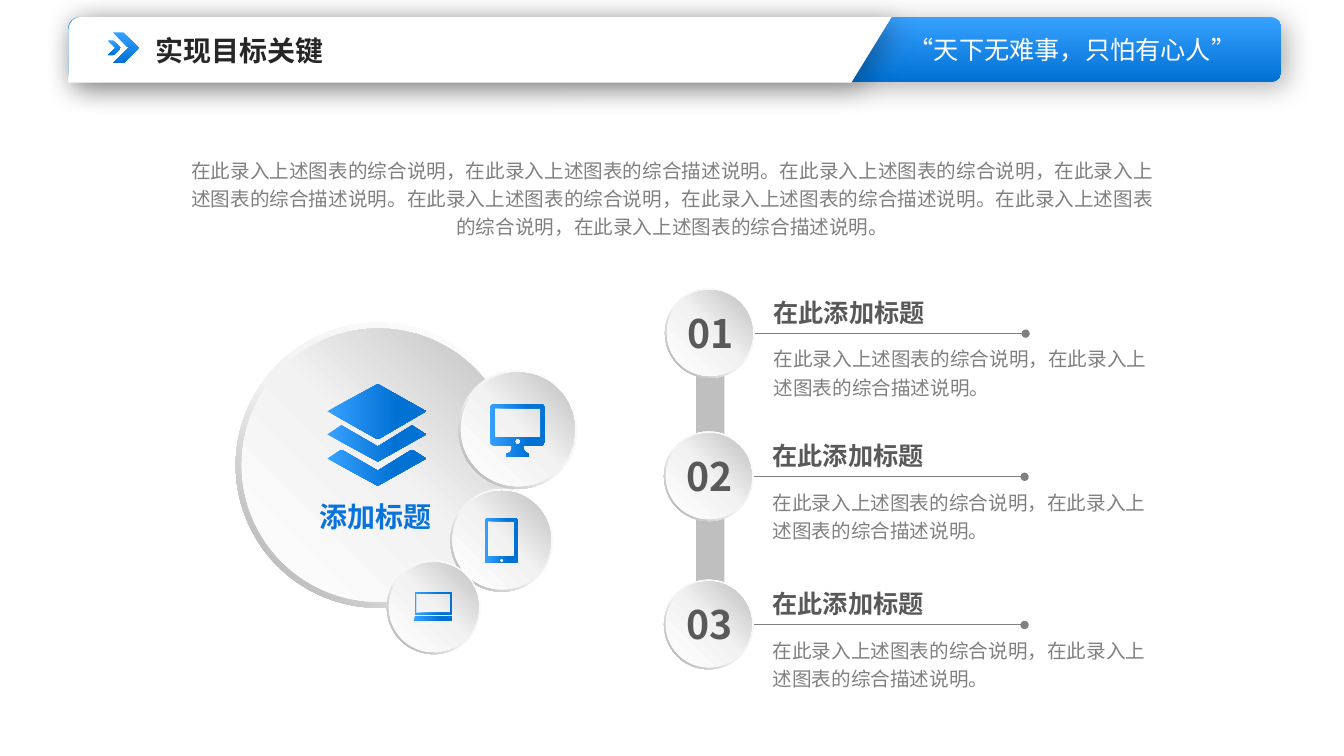
import math
from dataclasses import dataclass

import pptx
import pptx.dml.color
import pptx.enum.shapes
import pptx.enum.text
import pptx.oxml.ns
import pptx.util
from lxml import etree

Inches = pptx.util.Inches
SHAPE = pptx.enum.shapes.MSO_SHAPE
ALIGN = pptx.enum.text.PP_ALIGN
qn = pptx.oxml.ns.qn


@dataclass(frozen=True)
class Theme:
    font: str = "Noto Sans CJK SC"
    white: str = "FFFFFF"
    ink: str = "262626"
    heading: str = "595959"
    body: str = "808080"
    accent: str = "0973DD"
    rail: str = "BFBFBF"
    blue: tuple = ((0, "37A1FF"), (100, "0171D4"))
    icon: tuple = ((0, "37A1FF"), (70, "0171D4"))
    rim: tuple = ((0, "FFFFFF"), (55, "F2F2F2"), (100, "A6A6A6"))
    face: tuple = ((0, "FFFFFF"), (51, "F2F2F2"), (100, "BFBFBF"))
    number_size: int = 28
    title_size: int = 20
    heading_size: int = 18
    body_size: int = 14


THEME = Theme()
SUMMARY = "在此录入上述图表的综合说明，在此录入上述图表的综合描述说明。"


def rgb(color):
    return pptx.dml.color.RGBColor.from_string(color)


def paint(shape, fill, angle=0):
    """Fill with one colour, or with gradient stops at a clockwise angle."""
    shape.shadow.inherit = False
    shape.line.fill.background()
    if isinstance(fill, str):
        shape.fill.solid()
        shape.fill.fore_color.rgb = rgb(fill)
        return
    shape.fill.gradient()
    shape.fill.gradient_angle = (360 - angle) % 360
    stops = shape.element.spPr.find(qn("a:gradFill")).find(qn("a:gsLst"))
    for old_stop in list(stops):
        stops.remove(old_stop)
    for position, color in fill:
        stop = etree.SubElement(stops, qn("a:gs"), pos=str(position * 1000))
        etree.SubElement(stop, qn("a:srgbClr"), val=color)


def cast_shadow(shape):
    effects = shape.element.spPr.find(qn("a:effectLst"))
    shadow = etree.SubElement(
        effects, qn("a:outerShdw"), blurRad=str(pptx.util.Pt(20)),
        dist=str(pptx.util.Pt(5)), dir=str(45 * 60000), algn="tl", rotWithShape="0")
    color = etree.SubElement(shadow, qn("a:srgbClr"), val="000000")
    etree.SubElement(color, qn("a:alpha"), val="30000")


def add_preset(slide, kind, left, top, width, height, fill, angle, adjust=None):
    shape = slide.shapes.add_shape(
        kind, Inches(left), Inches(top), Inches(width), Inches(height))
    if adjust is not None:
        shape.adjustments[0] = adjust
    paint(shape, fill, angle)
    return shape


def add_outline(slide, contours, fill):
    """Draw closed contours as one shape; inner contours become holes."""
    contours = [[(Inches(x), Inches(y)) for x, y in points] for points in contours]
    builder = slide.shapes.build_freeform(*contours[0][0], scale=1.0)
    for index, points in enumerate(contours):
        if index:
            builder.move_to(*points[0])
        builder.add_line_segments(points[1:], close=True)
    shape = builder.convert_to_shape()
    paint(shape, fill)
    return shape


def arc(x, y, rx, ry, start, end, steps=12):
    angles = [math.radians(start + (end - start) * i / steps) for i in range(steps + 1)]
    return [(x + rx * math.cos(a), y + ry * math.sin(a)) for a in angles]


def box(left, top, right, bottom):
    return [(left, top), (right, top), (right, bottom), (left, bottom)]


def rounded_box(left, top, right, bottom, radius, foot=()):
    """Rounded box whose bottom edge may carry extra foot points."""
    corners = box(left + radius, top + radius, right - radius, bottom - radius)
    turns = [arc(x, y, radius, radius, start, start + 90, 4)
             for (x, y), start in zip(corners, (180, 270, 0, 90))]
    return turns[0] + turns[1] + turns[2] + list(foot) + turns[3]


def write(holder, text, size, color, bold=False, align=ALIGN.LEFT,
          spacing=None, insets=(0.1, 0.05)):
    frame = holder.text_frame
    frame.word_wrap = True
    frame.vertical_anchor = pptx.enum.text.MSO_ANCHOR.TOP
    frame.margin_left = frame.margin_right = Inches(insets[0])
    frame.margin_top = frame.margin_bottom = Inches(insets[1])
    frame.text = text
    paragraph = frame.paragraphs[0]
    paragraph.alignment = align
    if spacing:
        paragraph.line_spacing = spacing
    font = paragraph.runs[0].font
    font.size, font.bold, font.name = pptx.util.Pt(size), bold, THEME.font
    font.color.rgb = rgb(color)
    etree.SubElement(paragraph.runs[0]._r.get_or_add_rPr(), qn("a:ea"), typeface=THEME.font)


def add_text(slide, left, top, width, height, *content, **style):
    holder = slide.shapes.add_textbox(
        Inches(left), Inches(top), Inches(width), Inches(height))
    write(holder, *content, **style)


def add_disc(slide, left, top, size):
    add_preset(slide, SHAPE.DONUT, left, top, size, size, THEME.rim, 135, 0.049)
    inset = size * 0.021
    face = size - 2 * inset
    add_preset(slide, SHAPE.OVAL, left + inset, top + inset, face, face, THEME.face, 315)


def add_pin_line(slide, left, right, y):
    pin = slide.shapes.add_connector(
        pptx.enum.shapes.MSO_CONNECTOR.STRAIGHT,
        Inches(left), Inches(y), Inches(right), Inches(y))
    pin.line.color.rgb = rgb(THEME.body)
    pin.line.width = pptx.util.Pt(0.75)
    for end in ("a:headEnd", "a:tailEnd"):
        etree.SubElement(pin.line._get_or_add_ln(), qn(end), type="oval")
    etree.SubElement(pin.element.spPr, qn("a:effectLst"))


def add_banner(slide):
    cast_shadow(add_preset(slide, SHAPE.ROUNDED_RECTANGLE, 0.68, 0.17, 12.04, 0.64,
                           THEME.blue, 90))
    corner = arc(0.8, 0.3, 0.12, 0.13, 180, 270)
    cast_shadow(add_outline(
        slide, [corner + [(8.85, 0.17), (8.45, 0.82), (0.68, 0.82)]], THEME.white))
    add_text(slide, 8.65, 0.29, 3.99, 0.4, "“天下无难事，只怕有心人”",
             THEME.heading_size, THEME.white, align=ALIGN.CENTER)
    add_preset(slide, SHAPE.CHEVRON, 1.12, 0.32, 0.26, 0.31, THEME.blue, 90, 0.606)
    add_preset(slide, SHAPE.CHEVRON, 1.07, 0.4, 0.13, 0.15, THEME.blue, 90, 0.586)
    # The title stands in front of the banner
    title = slide.shapes.title
    title.left, title.top = Inches(1.47), Inches(0.29)
    title.width, title.height = Inches(2.44), Inches(0.41)
    write(title, "实现目标关键", THEME.title_size, THEME.ink, bold=True, insets=(0.07, 0.04))
    title.element.getparent().append(title.element)


def add_device_cluster(slide):
    # Main disc with the layer stack
    add_disc(slide, 2.34, 3.2, 2.83)
    add_text(slide, 2.73, 4.93, 2, 0.57, "添加标题", THEME.title_size, THEME.accent,
             bold=True, align=ALIGN.CENTER, insets=(0.05, 0.03))
    for top in (4.22, 4.46):
        layer = [(3.75, 0.21), (3.39, 0), (3.25, 0.09), (3.75, 0.36), (4.23, 0.09), (4.09, 0)]
        add_outline(slide, [[(x, top + y) for x, y in layer]], THEME.icon)
    add_outline(slide, [[(4.23, 4.08), (3.75, 3.81), (3.25, 4.08), (3.75, 4.36)]], THEME.icon)
    # Monitor
    add_disc(slide, 4.55, 3.67, 1.18)
    stand = [(5.19, 4.42), (5.2, 4.46), (5.22, 4.49), (5.25, 4.5), (5.25, 4.53),
             (5.03, 4.53), (5.03, 4.5), (5.06, 4.49), (5.08, 4.46), (5.08, 4.42)]
    add_outline(slide, [rounded_box(4.86, 4.01, 5.41, 4.42, 0.04, stand),
                        arc(5.14, 4.38, 0.03, 0.03, 0, 360),
                        box(4.91, 4.05, 5.37, 4.34)], THEME.icon)
    # Tablet
    add_disc(slide, 4.47, 4.85, 1.02)
    add_outline(slide, [rounded_box(4.81, 5.14, 5.14, 5.59, 0.03),
                        arc(4.98, 5.56, 0.02, 0.02, 0, 360),
                        box(4.84, 5.17, 5.11, 5.52)], THEME.icon)
    # Laptop
    add_disc(slide, 3.84, 5.56, 0.93)
    add_outline(slide, [box(4.12, 5.87, 4.49, 6.1), box(4.13, 5.89, 4.47, 6.08)], THEME.icon)
    add_outline(slide, [[(4.12, 6.11), (4.49, 6.11), (4.49, 6.16), (4.11, 6.16),
                         (4.11, 6.14)]], THEME.icon)


def add_rail(slide):
    """Vertical bar that swells behind each numbered disc."""
    center = 7.05
    bulbs = ((3.31, -90, 65), (4.78, -65, 65), (6.19, -65, 90))
    right = [point for y, start, end in bulbs
             for point in arc(center, y, 0.33, 0.29, start, end)]
    left = [(2 * center - x, y) for x, y in reversed(right)]
    add_outline(slide, [right + left], THEME.rail)


def add_step(slide, number, left, top):
    add_pin_line(slide, left + 0.66, left + 3.58, top + 0.45)
    add_text(slide, left + 0.98, top + 0.04, 2.28, 0.4, "在此添加标题",
             THEME.heading_size, THEME.heading, bold=True)
    add_text(slide, left + 0.98, top + 0.49, 4.06, 0.67, SUMMARY,
             THEME.body_size, THEME.body, spacing=1.2)
    add_disc(slide, left, top, 0.89)
    add_text(slide, left + 0.04, top + 0.16, 0.82, 0.57, f"{number:02d}",
             THEME.number_size, THEME.heading, bold=True, align=ALIGN.CENTER)


def main():
    deck = pptx.Presentation()
    deck.slide_width, deck.slide_height = Inches(13.34), Inches(7.5)
    slide = deck.slides.add_slide(deck.slide_layouts.get_by_name("Title Only"))
    add_banner(slide)
    add_text(slide, 1.79, 1.48, 9.77, 1.23, SUMMARY * 4, THEME.body_size, THEME.body,
             align=ALIGN.CENTER, spacing=1.2)
    add_device_cluster(slide)
    add_rail(slide)
    for number, (left, top) in enumerate(((6.6, 2.86), (6.59, 4.28), (6.59, 5.75)), 1):
        add_step(slide, number, left, top)
    deck.save("out.pptx")


if __name__ == "__main__":
    main()
